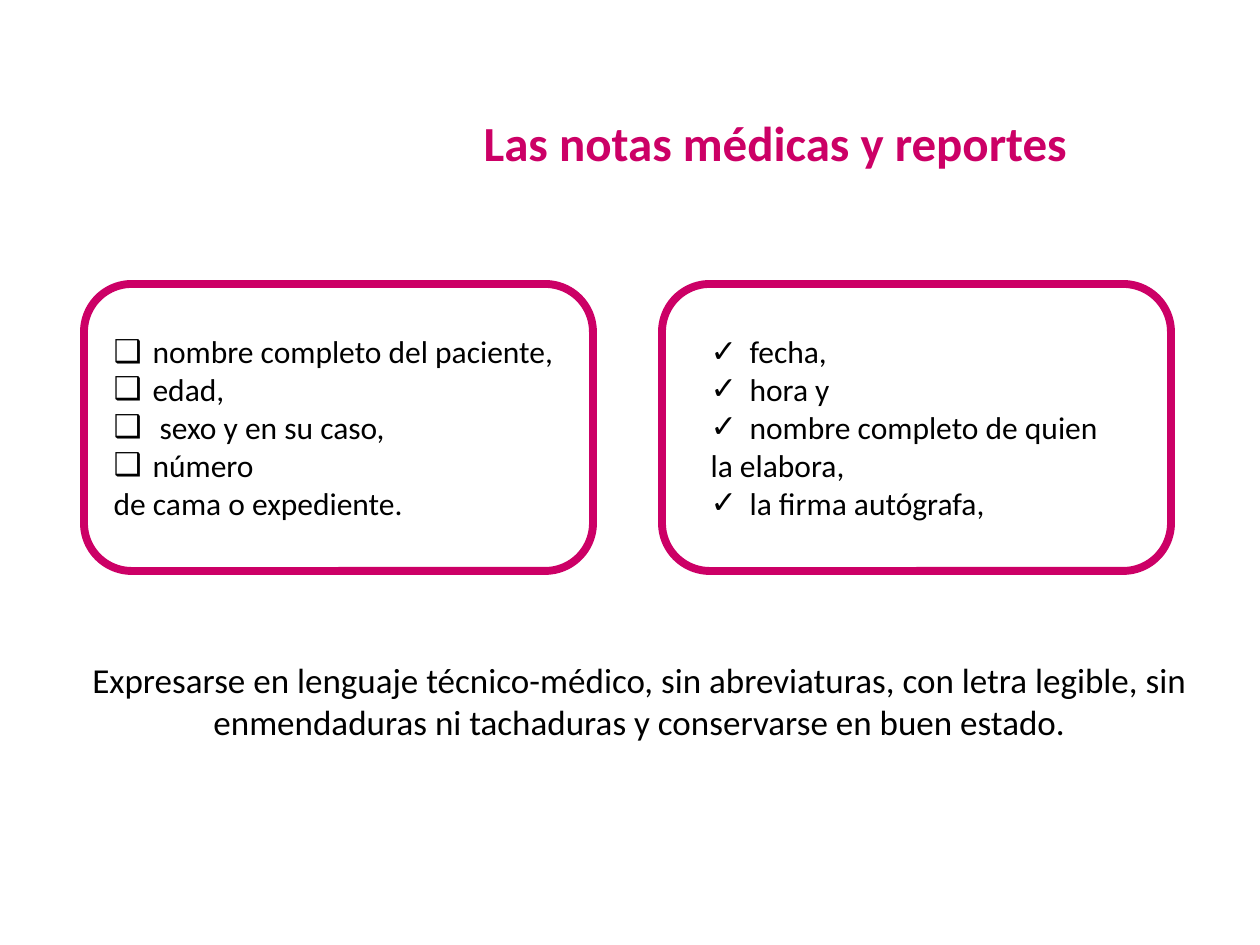
import pptx
import pptx.util
import pptx.dml.color
import pptx.enum.shapes
import pptx.enum.text
from dataclasses import dataclass
from lxml import etree

HEADING = "Las notas médicas y reportes"
PANELS = [
    {
        "frame": (84, 284, 509, 287),
        "list": (101, 326, 493, 242),
        "mark": "❑",
        "items": ["nombre completo del paciente,", "edad,", " sexo y en su caso,", "número"],
        "continuations": {3: "de cama o expediente."},
    },
    {
        "frame": (662, 284, 509, 287),
        "list": (698, 326, 436, 204),
        "mark": "✓",
        "items": ["fecha,", "hora y", "nombre completo de quien", "la firma autógrafa,"],
        "continuations": {2: "la elabora,"},
    },
]
ADVICE = (
    "Expresarse en lenguaje técnico-médico, sin abreviaturas, con letra legible, "
    "sin enmendaduras ni tachaduras y conservarse en buen estado."
)
HEADING_BOX = (471, 106, 646, 72)
ADVICE_BOX = (79, 652, 1121, 98)
LIST_INDENT = 39


@dataclass(frozen=True)
class Theme:
    accent = pptx.dml.color.RGBColor.from_string("CC0066")
    ink = pptx.dml.color.RGBColor.from_string("000000")
    font = "Calibri"
    heading_size = 28
    advice_size = 20
    list_size = 18
    frame_width = 4.5


ALIGN = pptx.enum.text.PP_ALIGN


def px(length):
    return pptx.util.Emu(round(length * 914400 / 126))


def place(part, box):
    part.left, part.top, part.width, part.height = map(px, box)


def prepare(text):
    text.word_wrap = True
    text.auto_size = pptx.enum.text.MSO_AUTO_SIZE.NONE
    text.vertical_anchor = pptx.enum.text.MSO_ANCHOR.TOP


def style(paragraph, size, color, align, bold=False):
    paragraph.alignment = align
    paragraph.space_before = pptx.util.Pt(0)
    paragraph.font.name = Theme.font
    paragraph.font.size = pptx.util.Pt(size)
    paragraph.font.bold = bold
    paragraph.font.color.rgb = color


def set_bullet(paragraph, mark):
    properties = paragraph._p.get_or_add_pPr()
    indent = px(LIST_INDENT) if mark else 0
    properties.set("marL", str(indent))
    properties.set("indent", str(-indent))
    tag = "a:buChar" if mark else "a:buNone"
    bullet = etree.SubElement(properties, pptx.oxml.ns.qn(tag))
    if mark:
        bullet.set("char", mark)


def fill_list(holder, panel):
    place(holder, panel["list"])
    prepare(holder.text_frame)
    lines = []
    for number, item in enumerate(panel["items"]):
        lines.append((item, panel["mark"]))
        if number in panel["continuations"]:
            lines.append((panel["continuations"][number], None))
    holder.text_frame.text = "\n".join(line for line, mark in lines)
    for paragraph, (line, mark) in zip(holder.text_frame.paragraphs, lines):
        set_bullet(paragraph, mark)
        style(paragraph, Theme.list_size, Theme.ink, ALIGN.JUSTIFY)


def add_frame(slide, box):
    frame = slide.shapes.add_shape(
        pptx.enum.shapes.MSO_SHAPE.ROUNDED_RECTANGLE, *map(px, box)
    )
    frame.shadow.inherit = False
    frame.fill.background()
    frame.line.color.rgb = Theme.accent
    frame.line.width = pptx.util.Pt(Theme.frame_width)


def main():
    deck = pptx.Presentation()
    deck.slide_width, deck.slide_height = px(1260), px(945)
    slide = deck.slides.add_slide(deck.slide_layouts.get_by_name("Two Content"))

    heading = slide.shapes.title
    place(heading, HEADING_BOX)
    prepare(heading.text_frame)
    heading.text_frame.text = HEADING
    style(heading.text_frame.paragraphs[0], Theme.heading_size, Theme.accent, ALIGN.LEFT, True)

    for index, panel in enumerate(PANELS, start=1):
        add_frame(slide, panel["frame"])
        fill_list(slide.placeholders[index], panel)

    advice = slide.shapes.add_textbox(*map(px, ADVICE_BOX))
    prepare(advice.text_frame)
    advice.text_frame.text = ADVICE
    style(advice.text_frame.paragraphs[0], Theme.advice_size, Theme.ink, ALIGN.CENTER)

    deck.save("out.pptx")


if __name__ == "__main__":
    main()
